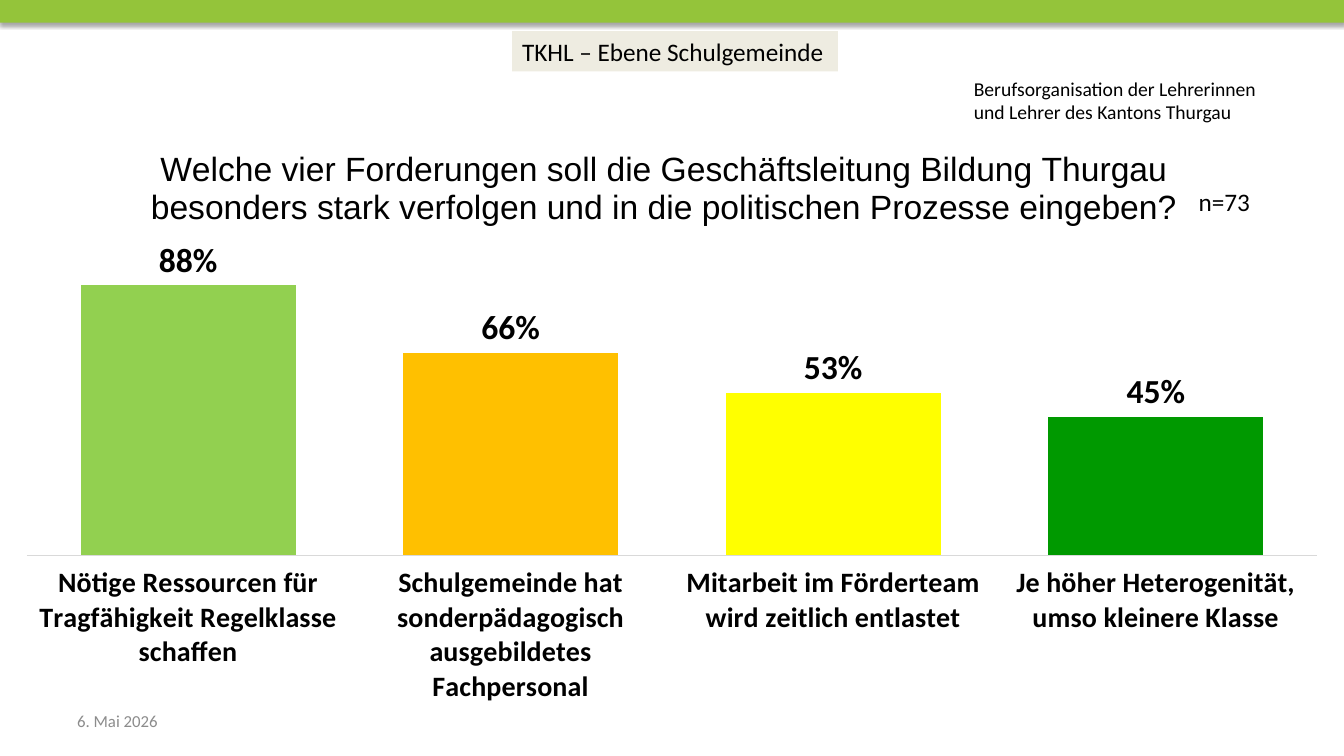
from dataclasses import dataclass

from lxml import etree
from pptx import Presentation
from pptx.chart.data import CategoryChartData
from pptx.dml.color import RGBColor
from pptx.enum.chart import XL_CHART_TYPE as ChartType, XL_LABEL_POSITION as LabelPosition
from pptx.enum.chart import XL_TICK_LABEL_POSITION as TickLabels, XL_TICK_MARK as TickMark
from pptx.enum.shapes import MSO_SHAPE as Preset
from pptx.enum.text import MSO_ANCHOR as Anchor
from pptx.oxml import parse_xml
from pptx.oxml.ns import nsdecls, qn
from pptx.util import Inches, Pt

WIDTH, HEIGHT = 13.33, 7.5


@dataclass(frozen=True)
class Theme:
    band: str = "94C43A"
    paper: str = "FFFFFF"
    tag: str = "EEECE1"
    ink: str = "000000"
    muted: str = "8C8C8C"
    axis: str = "D9D9D9"
    bars: tuple = ("92D050", "FFC000", "FFFF00", "009900")
    body: str = "Calibri"
    heading: str = "Arial"
    title: int = 24
    category: int = 20
    label: int = 18
    sender: int = 14
    footer: int = 12
    chart: int = 10


THEME = Theme()
DEMANDS = {
    "Nötige Ressourcen für Tragfähigkeit Regelklasse schaffen": 0.88,
    "Schulgemeinde hat sonderpädagogisch ausgebildetes Fachpersonal": 0.66,
    "Mitarbeit im Förderteam wird zeitlich entlastet": 0.53,
    "Je höher Heterogenität, umso kleinere Klasse": 0.45,
}
QUESTION = ("Welche vier Forderungen soll die Geschäftsleitung Bildung Thurgau\n"
            "besonders stark verfolgen und in die politischen Prozesse eingeben?")


def style_font(font, size, color=THEME.ink, name=THEME.body, bold=False):
    font.size, font.name, font.bold = Pt(size), name, bold
    font.color.rgb = RGBColor.from_string(color)


def add_text(slide, box, text, size, color=THEME.ink, fill=None, wrap=True, anchor=Anchor.TOP):
    shape = slide.shapes.add_textbox(*map(Inches, box))
    if fill:
        shape.fill.solid()
        shape.fill.fore_color.rgb = RGBColor.from_string(fill)
    frame = shape.text_frame
    frame.word_wrap, frame.vertical_anchor = wrap, anchor
    frame.text = text
    for paragraph in frame.paragraphs:
        style_font(paragraph.font, size, color)


def add_band(slide, box):
    band = slide.shapes.add_shape(Preset.RECTANGLE, *map(Inches, box))
    band.fill.solid()
    band.fill.fore_color.rgb = RGBColor.from_string(THEME.band)
    band.line.fill.background()
    # Soft shadow below the band
    band.element.spPr.append(parse_xml(
        f'<a:effectLst {nsdecls("a")}><a:outerShdw blurRad="{Pt(3.1)}" dist="{Pt(1.8)}" '
        'dir="5400000" rotWithShape="0"><a:srgbClr val="000000"><a:alpha val="35000"/>'
        '</a:srgbClr></a:outerShdw></a:effectLst>'))


def place(element, **shares):
    """Lay out a chart part in shares of the chart's size."""
    for old in element.findall(qn("c:layout")):
        element.remove(old)
    layout = etree.Element(qn("c:layout"))
    manual = etree.SubElement(layout, qn("c:manualLayout"))
    if "w" in shares:
        etree.SubElement(manual, qn("c:layoutTarget")).set("val", "inner")
    for side in ("xMode", "yMode"):
        etree.SubElement(manual, qn(f"c:{side}")).set("val", "edge")
    for key, share in shares.items():
        etree.SubElement(manual, qn(f"c:{key}")).set("val", str(share))
    text = element.find(qn("c:tx"))
    element.insert(0 if text is None else element.index(text) + 1, layout)


def add_demand_chart(slide, box):
    data = CategoryChartData(number_format="0%")
    data.categories = list(DEMANDS)
    data.add_series("Series 1", list(DEMANDS.values()))
    chart = slide.shapes.add_chart(ChartType.COLUMN_CLUSTERED, *map(Inches, box), data).chart
    style_font(chart.font, THEME.chart)
    chart.has_legend = False

    # Question above the columns
    title = chart.chart_title
    title.text_frame.text = QUESTION
    for paragraph in title.text_frame.paragraphs:
        style_font(paragraph.font, THEME.title, name=THEME.heading)
    place(title._element, x=0.11, y=0.04)
    place(chart._chartSpace.chart.plotArea, x=0.02, y=0.214, w=0.96, h=0.522)

    # Axes
    values, categories = chart.value_axis, chart.category_axis
    values.minimum_scale, values.maximum_scale = 0, 1
    values.has_major_gridlines = values.visible = False
    categories.major_tick_mark = categories.minor_tick_mark = TickMark.NONE
    categories.tick_label_position = TickLabels.LOW
    categories.format.line.width = Pt(0.75)
    categories.format.line.color.rgb = RGBColor.from_string(THEME.axis)
    style_font(categories.tick_labels.font, THEME.category, bold=True)

    # Columns and their percentages
    plot = chart.plots[0]
    plot.gap_width, plot.vary_by_categories = 50, False
    series = plot.series[0]
    for index, color in enumerate(THEME.bars):
        fill = series.points[index].format.fill
        fill.solid()
        fill.fore_color.rgb = RGBColor.from_string(color)
    labels = series.data_labels
    labels.show_value, labels.position = True, LabelPosition.OUTSIDE_END
    labels.number_format, labels.number_format_is_linked = "0%", False
    style_font(labels.font, THEME.title, bold=True)


def build_survey_slide(slide, width, height):
    # Header
    add_band(slide, (0, 0, width, 0.03 * height))
    add_text(slide, (9.56, 0.35, 3.11, 1.29),
             "Berufsorganisation der Lehrerinnen\nund Lehrer des Kantons Thurgau",
             THEME.sender, fill=THEME.paper, anchor=Anchor.MIDDLE)
    # Survey result
    add_demand_chart(slide, (0, 1.22, width, 5.83))
    # Date, level and sample size
    add_text(slide, (0.05 * width, 6.95, 3.11, 0.4), "6. Mai 2026",
             THEME.footer, THEME.muted, anchor=Anchor.MIDDLE)
    add_text(slide, (5.08, 0.31, 3.23, 0.4), "TKHL – Ebene Schulgemeinde",
             THEME.label, fill=THEME.tag, wrap=False)
    add_text(slide, (11.79, 1.8, 0.72, 0.4), "n=73", THEME.label, wrap=False)


def main():
    presentation = Presentation()
    presentation.slide_width, presentation.slide_height = Inches(WIDTH), Inches(HEIGHT)
    slide = presentation.slides.add_slide(presentation.slide_layouts[6])
    build_survey_slide(slide, WIDTH, HEIGHT)
    presentation.save("out.pptx")


if __name__ == "__main__":
    main()
